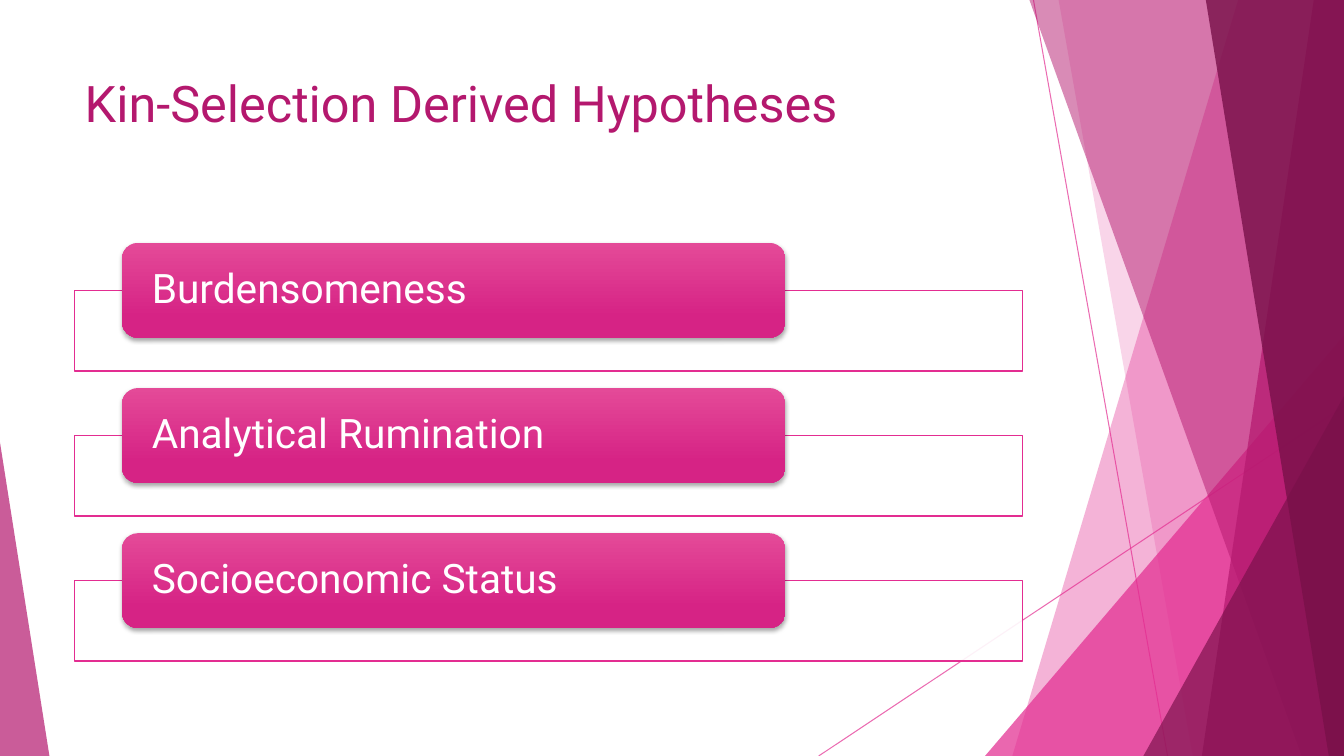
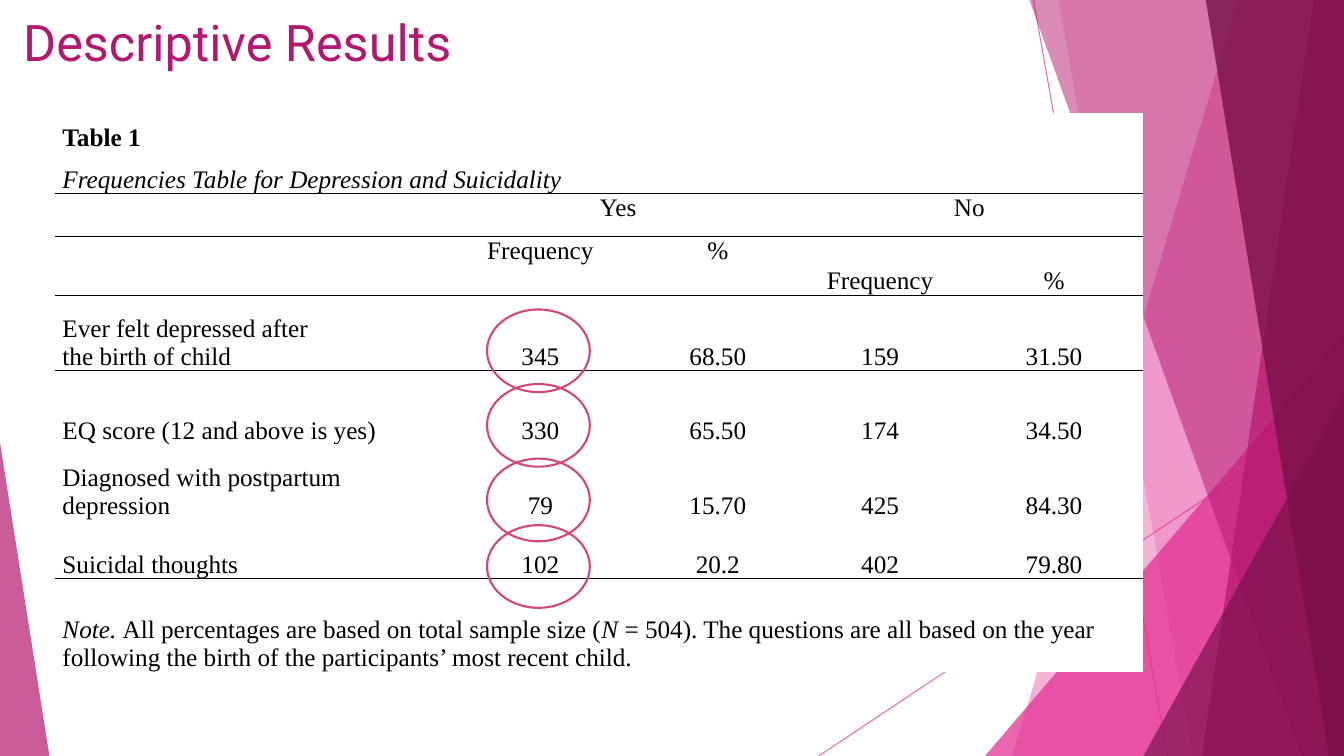
from dataclasses import dataclass

from lxml.etree import SubElement
from pptx import Presentation
from pptx.dml.color import RGBColor
from pptx.enum.shapes import MSO_CONNECTOR, MSO_SHAPE
from pptx.enum.text import MSO_ANCHOR, MSO_AUTO_SIZE, PP_ALIGN
from pptx.oxml.ns import qn
from pptx.util import Inches, Pt


@dataclass(frozen=True)
class Theme:
    pink: str = "E32D91"
    magenta: str = "B4186E"
    plum: str = "781049"
    pill_top: str = "E44A98"
    pill_bottom: str = "D62385"
    ring: str = "D54773"
    white: str = "FFFFFF"
    black: str = "000000"
    font: str = "Roboto"
    table_font: str = "Times New Roman"
    title_size: int = 36
    pill_size: int = 29
    table_size: int = 18
    plain_table: str = "{2D5ABB26-0587-4C30-8999-92F81FD0307C}"


def rgb(color):
    return RGBColor.from_string(color)


def set_alpha(sp, percent):
    """Make the first solid colour of a shape or line translucent."""
    color = next(sp.element.spPr.iter(qn("a:srgbClr")))
    SubElement(color, qn("a:alpha"), val=str(percent * 1000))


class Deck:
    def __init__(self, theme):
        self.theme = theme
        self.prs = Presentation()
        self.prs.slide_width = Inches(13.33)
        self.prs.slide_height = Inches(7.5)
        self.layout = self.prs.slide_layouts[5]
        self.s = None

    # Slides and title
    def new_slide(self, title, left, top):
        first = self.s is None
        self.s = self.prs.slides.add_slide(self.layout)
        if first:
            self.backdrop()
        sp = self.s.shapes.title
        sp.left, sp.top = Inches(left), Inches(top)
        sp.width, sp.height = Inches(9.4), Inches(1.44)
        tf = sp.text_frame
        tf.auto_size = MSO_AUTO_SIZE.NONE
        tf.vertical_anchor = MSO_ANCHOR.TOP
        t = self.theme
        self.add_text(tf, [[(title, "")]], t.font, t.title_size, t.magenta)

    # Text, run by run; style letters: b bold, i italic
    def add_text(self, tf, paragraphs, font, size, color, align=PP_ALIGN.LEFT):
        tf.word_wrap = True
        for i, runs in enumerate(paragraphs):
            p = tf.add_paragraph() if i else tf.paragraphs[0]
            p.alignment = align
            for text, style in runs:
                r = p.add_run()
                r.text = text
                r.font.name, r.font.size = font, Pt(size)
                r.font.bold, r.font.italic = "b" in style, "i" in style
                r.font.color.rgb = rgb(color)
        return tf

    # Facets shared by all slides, kept on the layout
    def backdrop(self):
        t = self.theme
        group = self.s.shapes.add_group_shape()
        for x1, y1, x2, y2 in [(10.25, 0, 11.58, 7.5), (13.33, 4.03, 8.12, 7.5)]:
            self.ray(group.shapes, x1, y1, x2, y2)
        self.facet(group.shapes, 12.28, 10.04, t.pink, 36)
        self.facet(group.shapes, 10.5, 11.83, t.pink, 20)
        self.triangle(group.shapes, 9.77, 3.33, 3.56, 1, t.pink, 72)
        self.facet(group.shapes, 10.21, 12.91, t.magenta, 50)
        self.facet(group.shapes, 13.03, 11.92, t.magenta, 70)
        self.facet(group.shapes, 11.96, 13.18, t.plum, 80)
        self.triangle(group.shapes, 11.34, 3.93, 1.99, 1, t.plum, 66)
        self.triangle(group.shapes, 0, 4.39, 0.49, 0, t.magenta, 70)
        for i, props in enumerate(group.element.iter(qn("p:cNvPr")), 100):
            props.set("id", str(i))
        self.layout.shapes.element.insert(2, group.element)

    def ray(self, shapes, x1, y1, x2, y2):
        line = shapes.add_connector(MSO_CONNECTOR.STRAIGHT, Inches(x1), Inches(y1),
                                    Inches(x2), Inches(y2))
        line.line.color.rgb = rgb(self.theme.pink)
        line.line.width = Pt(0.75)
        set_alpha(line, 70)
        SubElement(line.element.spPr, qn("a:effectLst"))

    def facet(self, shapes, top_x, bottom_x, color, alpha):
        """A band from a slanted edge to the right side of the slide."""
        right, bottom = self.prs.slide_width, self.prs.slide_height
        outline = shapes.build_freeform(Inches(top_x), 0)
        outline.add_line_segments([(right, 0), (right, bottom), (Inches(bottom_x), bottom)])
        self.paint(outline.convert_to_shape(), color, alpha)

    def triangle(self, shapes, left, top, width, apex, color, alpha):
        sp = shapes.add_shape(MSO_SHAPE.ISOSCELES_TRIANGLE, Inches(left), Inches(top),
                              Inches(width), Inches(7.5 - top))
        sp.adjustments[0] = apex
        self.paint(sp, color, alpha)

    def paint(self, sp, color, alpha):
        sp.shadow.inherit = False
        sp.fill.solid()
        sp.fill.fore_color.rgb = rgb(color)
        set_alpha(sp, alpha)
        sp.line.fill.background()

    # Preset shapes on the current slide
    def shape(self, kind, left, top, width, height):
        sp = self.s.shapes.add_shape(kind, Inches(left), Inches(top),
                                     Inches(width), Inches(height))
        sp.shadow.inherit = False
        return sp

    def frame(self, left, top, width, height):
        sp = self.shape(MSO_SHAPE.RECTANGLE, left, top, width, height)
        self.paint(sp, self.theme.white, 90)
        sp.line.color.rgb = rgb(self.theme.pink)
        sp.line.width = Pt(1)

    def pill(self, text, left, top, width, height):
        t = self.theme
        sp = self.shape(MSO_SHAPE.ROUNDED_RECTANGLE, left, top, width, height)
        sp.line.fill.background()
        sp.fill.gradient()
        sp.fill.gradient_angle = 270
        stops = [(0, t.pill_top), (0.78, t.pill_bottom)]
        for stop, (position, color) in zip(sp.fill.gradient_stops, stops):
            stop.position = position
            stop.color.rgb = rgb(color)
        effects = sp.element.spPr.find(qn("a:effectLst"))
        shadow = SubElement(effects, qn("a:outerShdw"), blurRad=str(Pt(3)),
                            dist=str(Pt(2)), dir="5400000", rotWithShape="0")
        color = SubElement(shadow, qn("a:srgbClr"), val=t.black)
        SubElement(color, qn("a:alpha"), val="35000")
        tf = self.add_text(sp.text_frame, [[(text, "")]], t.font, t.pill_size, t.white)
        tf.margin_left = tf.margin_right = Inches(0.25)
        tf.margin_top = tf.margin_bottom = 0
        tf.vertical_anchor = MSO_ANCHOR.MIDDLE
        tf.paragraphs[0].line_spacing = 0.9

    def ring(self, left, top, width, height):
        sp = self.shape(MSO_SHAPE.OVAL, left, top, width, height)
        sp.fill.background()
        sp.line.color.rgb = rgb(self.theme.ring)
        sp.line.width = Pt(1.5)

    # Table
    def table(self, left, top, widths, heights):
        frame = self.s.shapes.add_table(len(heights), len(widths), Inches(left), Inches(top),
                                        Inches(sum(widths)), Inches(sum(heights)))
        next(frame.element.iter(qn("a:tableStyleId"))).text = self.theme.plain_table
        table = frame.table
        table.first_row = table.horz_banding = False
        for column, width in zip(table.columns, widths):
            column.width = Inches(width)
        for row, height in zip(table.rows, heights):
            row.height = Inches(height)
        for cell in table.iter_cells():
            cell.fill.solid()
            cell.fill.fore_color.rgb = rgb(self.theme.white)
            cell.margin_left = cell.margin_right = Inches(0.07)
            cell.margin_top = cell.margin_bottom = 0
            cell.vertical_anchor = MSO_ANCHOR.BOTTOM
        return table

    def fill_cell(self, cell, paragraphs, align=PP_ALIGN.LEFT):
        t = self.theme
        self.add_text(cell.text_frame, paragraphs, t.table_font, t.table_size, t.black, align)

    def rule_above(self, cell):
        props = cell._tc.get_or_add_tcPr()
        edge = props.makeelement(qn("a:lnT"), {"w": str(Pt(1))})
        props.insert(0, edge)
        fill = SubElement(edge, qn("a:solidFill"))
        SubElement(fill, qn("a:srgbClr"), val=self.theme.black)


def hypotheses(deck):
    deck.new_slide("Kin-Selection Derived Hypotheses", 0.74, 0.67)
    topics = ["Burdensomeness", "Analytical Rumination", "Socioeconomic Status"]
    for i, topic in enumerate(topics):
        top = 2.41 + 1.44 * i
        deck.frame(0.74, top + 0.47, 9.4, 0.8)
        deck.pill(topic, 1.21, top, 6.58, 0.94)


def results(deck):
    deck.new_slide("Descriptive Results", 0.13, 0.06)
    table = deck.table(0.55, 1.12, [3.82, 1.98, 1.54, 1.68, 1.77],
                       [0.39, 0.41, 0.43, 0.58, 0.75, 0.73, 0.75, 0.58, 0.93])

    # Caption and note across the full width
    wide_rows = {
        0: [("Table 1", "b")],
        1: [("Frequencies Table for Depression and Suicidality", "i")],
        8: [("Note. ", "i"),
            ("All percentages are based on total sample size (", ""),
            ("N", "i"),
            (" = 504). The questions are all based on the year following the birth "
             "of the participants’ most recent child.", "")],
    }
    for row, runs in wide_rows.items():
        table.cell(row, 0).merge(table.cell(row, 4))
        deck.fill_cell(table.cell(row, 0), [runs])

    # Headings and figures
    for col in (1, 3):
        table.cell(2, col).merge(table.cell(2, col + 1))
    grid = [
        ("", "Yes", "", "No", ""),
        ("", "Frequency", "%", "Frequency", "%"),
        ("Ever felt depressed after\nthe birth of child", "345", "68.50", "159", "31.50"),
        ("EQ score (12 and above is yes)", "330", "65.50", "174", "34.50"),
        ("Diagnosed with postpartum\ndepression", "79", "15.70", "425", "84.30"),
        ("Suicidal thoughts", "102", "20.2", "402", "79.80"),
    ]
    for row, texts in enumerate(grid, 2):
        for col, text in enumerate(texts):
            if text:
                lines = [[(line, "")] for line in text.split("\n")]
                align = PP_ALIGN.CENTER if col else PP_ALIGN.LEFT
                deck.fill_cell(table.cell(row, col), lines, align)
    for row, col in [(2, 1), (2, 3), (3, 1), (3, 2)]:
        table.cell(row, col).vertical_anchor = MSO_ANCHOR.TOP

    # Horizontal rules; the first % heading has none above it
    for row in (2, 3, 4, 8):
        for col in range(5):
            if (row, col) != (3, 2):
                deck.rule_above(table.cell(row, col))

    # Rings around the Yes frequencies
    for top in (3.07, 3.81, 4.55, 5.21):
        deck.ring(4.83, top, 1.02, 0.82)


def main():
    deck = Deck(Theme())
    hypotheses(deck)
    results(deck)
    deck.prs.save("out.pptx")


if __name__ == "__main__":
    main()
